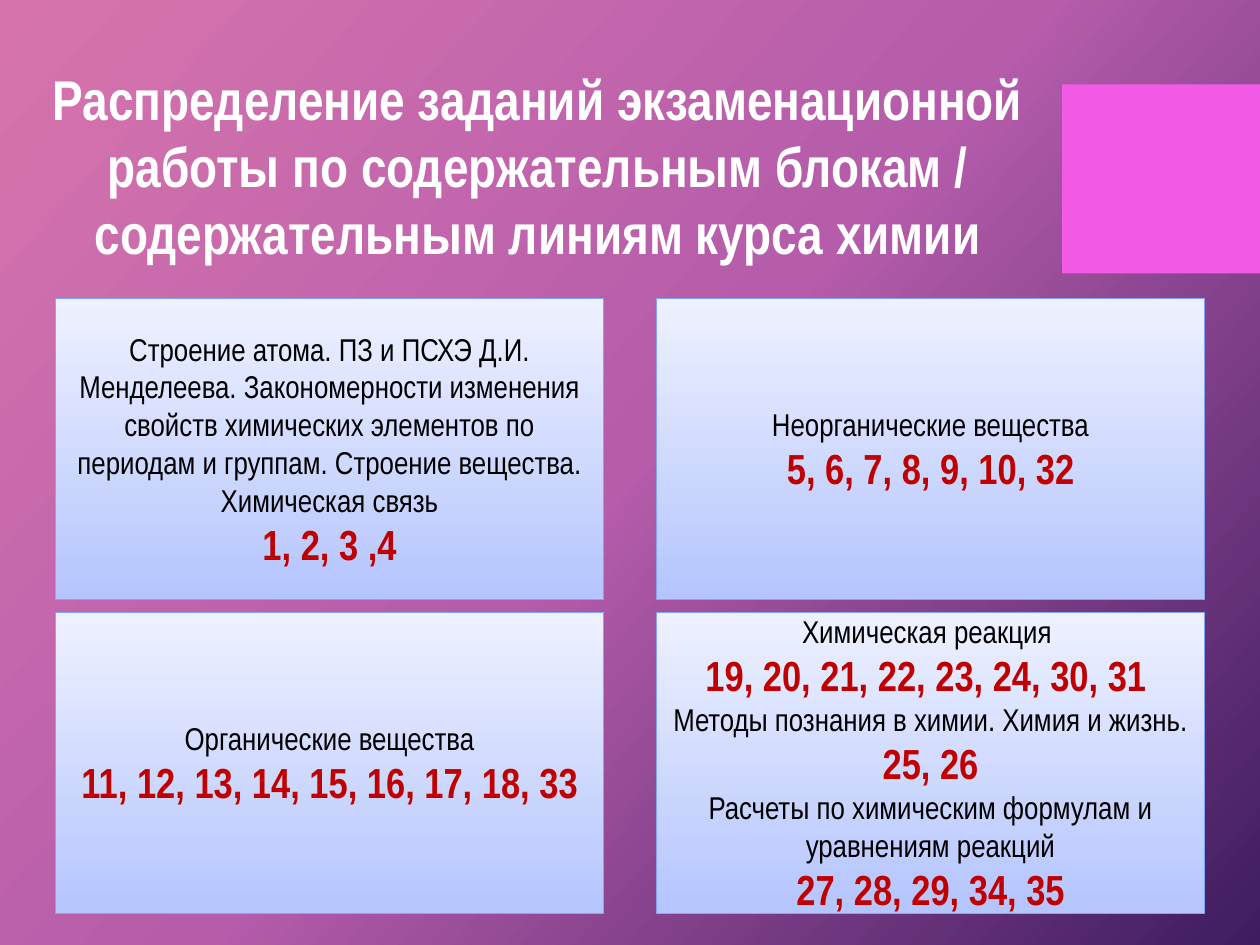
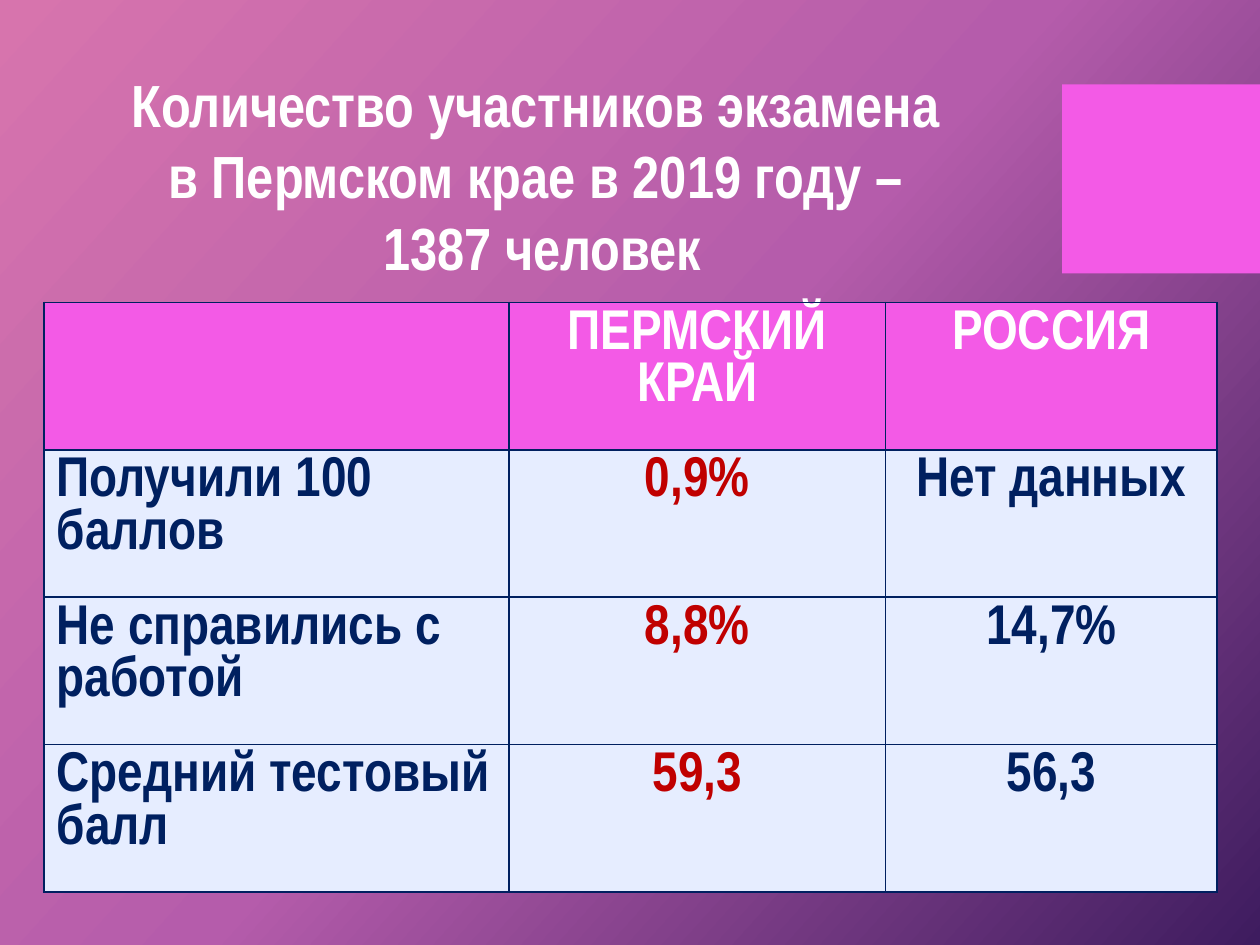
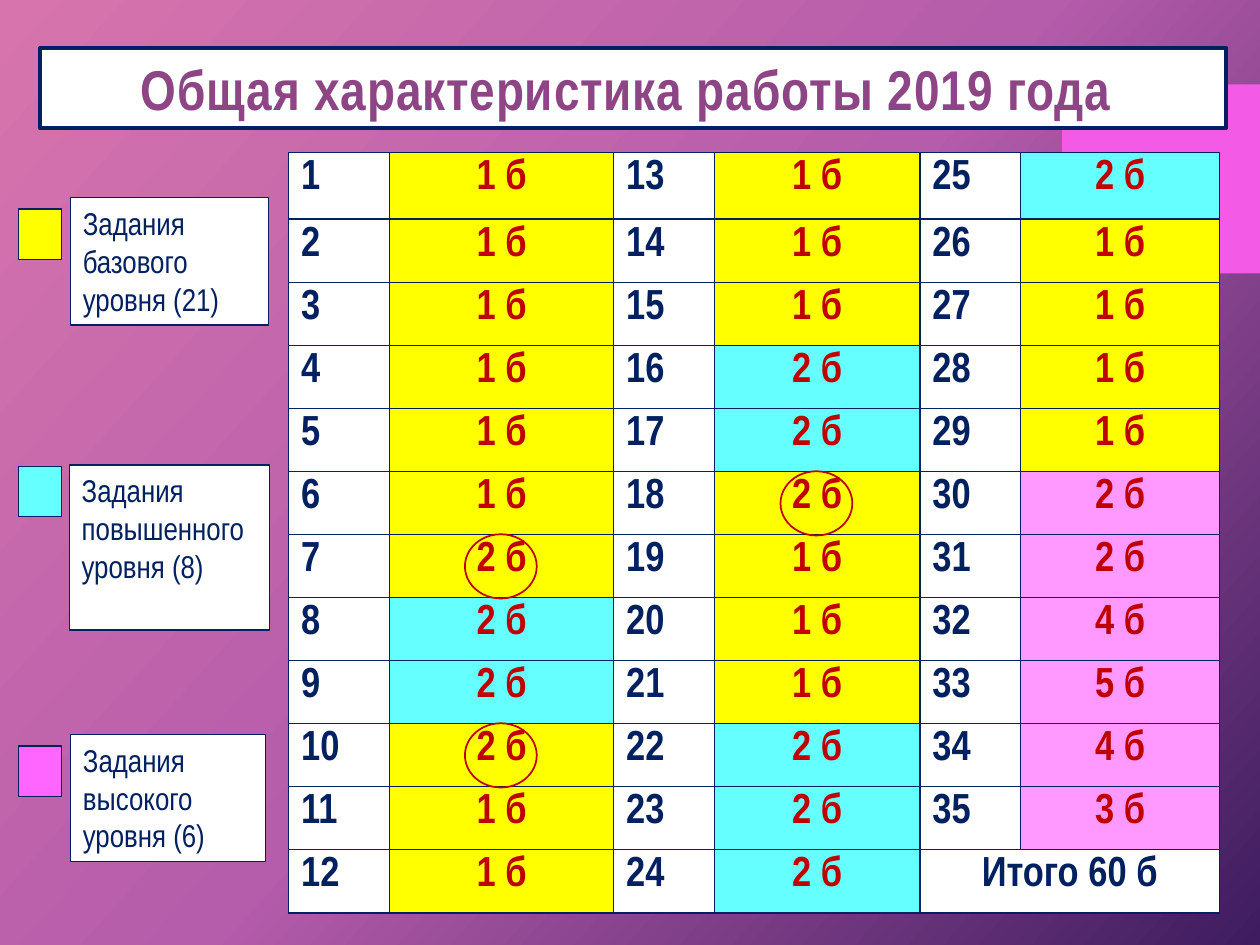
from itertools import accumulate

from pptx import Presentation
from pptx.dml.color import RGBColor
from pptx.enum.shapes import MSO_SHAPE as Shape
from pptx.enum.text import MSO_ANCHOR as Anchor, PP_ALIGN as Align
from pptx.oxml.ns import qn
from pptx.util import Inches, Pt
from lxml.etree import SubElement

FONT = "Arial Narrow"
NAVY, RED, WHITE, BLACK = "002060", "C00000", "FFFFFF", "000000"
PINK, PALE_BLUE, PLUM = "F35AE6", "E6EDFF", "8D4585"
BACKGROUND = [(0, "D774AD"), (50, "B55CAB"), (100, "3E1C5F")]
CARD_FILL, CARD_LINE = [(0, "EEF1FF"), (100, "B5C5FE")], "84A3FD"
LEVEL_FILLS = {"Б": "FFFF00", "П": "66FFFF", "В": "FF99FF"}

TASK_CARDS = [
    [("Строение атома. ПЗ и ПСХЭ Д.И. Менделеева. Закономерности изменения свойств "
      "химических элементов по периодам и группам. Строение вещества. Химическая связь",
      "1, 2, 3 ,4")],
    [("Неорганические вещества", "5, 6, 7, 8, 9, 10, 32")],
    [("Органические вещества", "11, 12, 13, 14, 15, 16, 17, 18, 33")],
    [("Химическая реакция ", "19, 20, 21, 22, 23, 24, 30, 31 "),
     ("Методы познания в химии. Химия и жизнь.", "25, 26"),
     ("Расчеты по химическим формулам и уравнениям реакций", "27, 28, 29, 34, 35")],
]
RESULTS = [
    ("", "ПЕРМСКИЙ КРАЙ", "РОССИЯ"),
    ("Получили 100 баллов", "0,9%", "Нет данных"),
    ("Не справились с работой", "8,8%", "14,7%"),
    ("Средний тестовый балл", "59,3", "56,3"),
]
TASK_COLUMNS = [
    ("111111222211", "БББББББППБББ"),
    ("111222111222", "БББППББББППП"),
    ("21111224543", "ПББББВВВВВВ"),
]
CIRCLED_TASKS = [7, 10, 18]
LEGEND = [
    ("FFFF00", (0.15, 1.66), "Задания базового уровня (21)", (0.56, 1.57, 1.57, 1.01)),
    ("66FFFF", (0.15, 3.7), "Задания повышенного уровня (8)", (0.55, 3.69, 1.59, 1.31)),
    ("FF66FF", (0.15, 5.92), "Задания высокого уровня (6)", (0.56, 5.83, 1.55, 1.01)),
]


def color(value):
    """Turn a hex string into a colour."""
    return RGBColor.from_string(value)


def set_gradient(fill, element, stops, angle):
    """Fill with gradient stops, the angle counted clockwise."""
    fill.gradient()
    fill.gradient_angle = 360 - angle
    stop_list = next(element.iter(qn("a:gsLst")))
    for stop in list(stop_list):
        stop_list.remove(stop)
    for position, value in stops:
        stop = SubElement(stop_list, qn("a:gs"), pos=str(position * 1000))
        SubElement(stop, qn("a:srgbClr"), val=value)


def set_text(paragraph, text, size, text_color, bold=False, align=Align.LEFT):
    """Write one paragraph in the shared font."""
    paragraph.text = text
    paragraph.alignment = align
    paragraph.font.name = FONT
    paragraph.font.size = Pt(size)
    paragraph.font.bold = bold
    paragraph.font.color.rgb = color(text_color)


def add_box(slide, box, fill=None, line=None, width=0.75, kind=Shape.RECTANGLE):
    """Add a shape without shadow, with optional fill and outline."""
    shape = slide.shapes.add_shape(kind, *map(Inches, box))
    shape.shadow.inherit = False
    if fill:
        shape.fill.solid()
        shape.fill.fore_color.rgb = color(fill)
    else:
        shape.fill.background()
    if line:
        shape.line.color.rgb = color(line)
        shape.line.width = Pt(width)
    else:
        shape.line.fill.background()
    shape.text_frame.word_wrap = True
    shape.text_frame.vertical_anchor = Anchor.TOP
    return shape


def add_slide(presentation):
    """Add a blank slide with the pink block at the right edge."""
    slide = presentation.slides.add_slide(presentation.slide_layouts[6])
    add_box(slide, (8.43, 0.67, 1.57, 1.5), PINK)
    return slide


def add_title(slide, box, lines, size):
    """Add a white centred title, one paragraph per line."""
    frame = slide.shapes.add_textbox(*map(Inches, box)).text_frame
    frame.word_wrap = True
    for index, line in enumerate(lines):
        paragraph = frame.add_paragraph() if index else frame.paragraphs[0]
        set_text(paragraph, line, size, WHITE, True, Align.CENTER)


def add_grid(slide, left, top, columns, rows):
    """Add an unstyled table with the given column widths and row heights."""
    frame = slide.shapes.add_table(len(rows), len(columns), Inches(left), Inches(top),
                                   Inches(sum(columns)), Inches(sum(rows)))
    table = frame.table
    table.first_row = table.horz_banding = False
    for column, width in zip(table.columns, columns):
        column.width = Inches(width)
    for row, height in zip(table.rows, rows):
        row.height = Inches(height)
    return table


def set_cell(cell, text, fill, size, text_color, align=Align.LEFT):
    """Fill, outline and write one table cell."""
    properties = cell._tc.get_or_add_tcPr()
    for side in ("lnL", "lnR", "lnT", "lnB"):
        border = SubElement(properties, qn(f"a:{side}"), w=str(Pt(1)))
        border_fill = SubElement(border, qn("a:solidFill"))
        SubElement(border_fill, qn("a:srgbClr"), val=NAVY)
    cell.fill.solid()
    cell.fill.fore_color.rgb = color(fill)
    set_text(cell.text_frame.paragraphs[0], text, size, text_color, True, align)


def add_card(slide, box, topics):
    """Add a card with topics and their task numbers."""
    card = add_box(slide, box, line=CARD_LINE)
    set_gradient(card.fill, card.element, CARD_FILL, 90)
    frame = card.text_frame
    frame.vertical_anchor = Anchor.MIDDLE
    for index, (topic, numbers) in enumerate(topics):
        paragraph = frame.add_paragraph() if index else frame.paragraphs[0]
        set_text(paragraph, topic, 18, BLACK, align=Align.CENTER)
        set_text(frame.add_paragraph(), numbers, 24, RED, True, Align.CENTER)


def add_results(slide, left, top):
    """Add the table comparing the region with the country."""
    table = add_grid(slide, left, top, [3.69, 2.99, 2.63], [1.17] * len(RESULTS))
    for row, values in enumerate(RESULTS):
        for column, value in enumerate(values):
            text_color = WHITE if row == 0 else RED if column == 1 else NAVY
            set_cell(table.cell(row, column), value, PALE_BLUE if row else PINK, 32,
                     text_color, Align.CENTER if column else Align.LEFT)


def add_scores(slide, left, top):
    """Add the table of points per task, the total and the circles."""
    columns = [0.8, 1.78, 0.8, 1.63, 0.8, 1.58]
    rows = [0.53] + [0.5] * 11
    table = add_grid(slide, left, top, columns, rows)
    column_lefts = list(accumulate(columns, initial=left))
    row_tops = list(accumulate(rows, initial=top))
    for group, (points, levels) in enumerate(TASK_COLUMNS):
        for row, (point, level) in enumerate(zip(points, levels)):
            task = group * len(rows) + row + 1
            set_cell(table.cell(row, 2 * group), str(task), WHITE, 24, NAVY)
            set_cell(table.cell(row, 2 * group + 1), f"{point} б", LEVEL_FILLS[level],
                     24, RED, Align.CENTER)
    total = table.cell(11, 4)
    total.merge(table.cell(11, 5))
    set_cell(total, "Итого 60 б", WHITE, 24, NAVY, Align.CENTER)
    for task in CIRCLED_TASKS:
        group, row = divmod(task - 1, len(rows))
        column = 2 * group + 1
        center_x = column_lefts[column] + columns[column] / 2
        center_y = row_tops[row] + rows[row] / 2
        add_box(slide, (center_x - 0.29, center_y - 0.25, 0.57, 0.51),
                line=RED, width=1, kind=Shape.OVAL)


def add_legend(slide):
    """Add a colour sample and a label for each level."""
    for fill, corner, label, box in LEGEND:
        add_box(slide, (*corner, 0.34, 0.4), fill, NAVY)
        label_box = add_box(slide, box, WHITE, NAVY)
        set_text(label_box.text_frame.paragraphs[0], label, 18, NAVY)


def add_banner(slide, box, text):
    """Add the framed title with widened letters."""
    paragraph = add_box(slide, box, WHITE, NAVY, 2.25).text_frame.paragraphs[0]
    set_text(paragraph, text, 32, PLUM, True, Align.CENTER)
    paragraph.runs[0].font._element.set("spc", "50")


def build_blocks_slide(presentation):
    """Build the slide of tasks by content block."""
    slide = add_slide(presentation)
    add_title(slide, (0.23, 0.46, 8.08, 1.72),
              ["Распределение заданий экзаменационной работы по содержательным блокам / "
               "содержательным линиям курса химии"], 32)
    for index, topics in enumerate(TASK_CARDS):
        row, column = divmod(index, 2)
        add_card(slide, (0.44 + 4.77 * column, 2.37 + 2.49 * row, 4.35, 2.39), topics)


def build_results_slide(presentation):
    """Build the slide of exam results."""
    slide = add_slide(presentation)
    add_results(slide, 0.35, 2.4)
    add_title(slide, (0.79, 0.49, 7.03, 1.82),
              ["Количество участников экзамена ", "в Пермском крае в 2019 году – ",
               "1387 человек"], 34)


def build_scores_slide(presentation):
    """Build the slide of points and levels per task."""
    slide = add_slide(presentation)
    add_scores(slide, 2.29, 1.21)
    add_legend(slide)
    add_banner(slide, (0.32, 0.38, 9.41, 0.64), "Общая характеристика работы 2019 года ")


def main():
    """Build and save the presentation."""
    presentation = Presentation()
    presentation.slide_width, presentation.slide_height = Inches(10), Inches(7.5)
    master = presentation.slide_master
    set_gradient(master.background.fill, master.element, BACKGROUND, 42)
    build_blocks_slide(presentation)
    build_results_slide(presentation)
    build_scores_slide(presentation)
    presentation.save("out.pptx")


if __name__ == "__main__":
    main()
